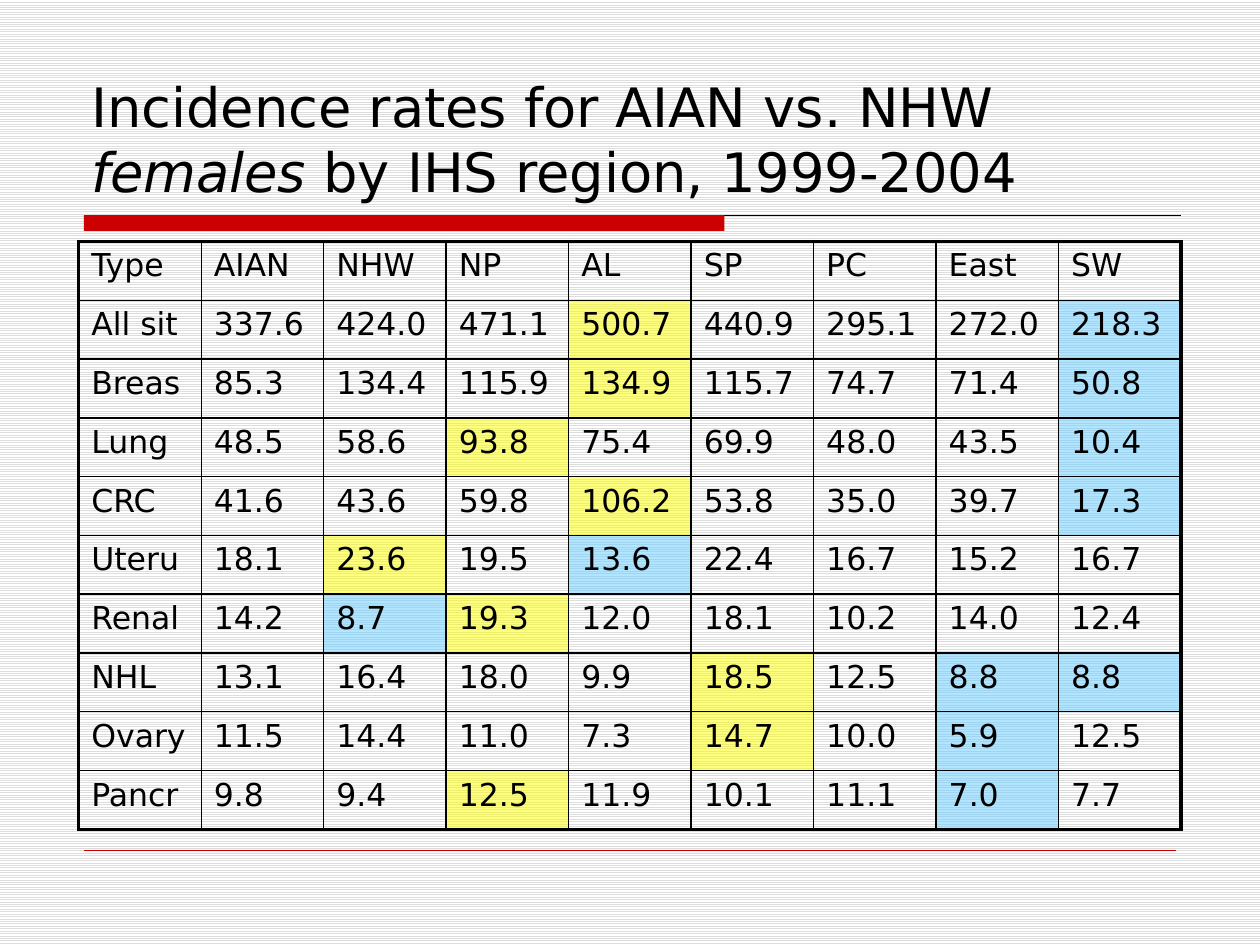
from dataclasses import dataclass

from lxml import etree
from pptx import Presentation
from pptx.dml.color import RGBColor
from pptx.enum.dml import MSO_PATTERN
from pptx.enum.shapes import MSO_CONNECTOR, MSO_SHAPE
from pptx.enum.text import MSO_ANCHOR
from pptx.oxml.ns import qn
from pptx.util import Inches, Pt

STRAIGHT = MSO_CONNECTOR.STRAIGHT
RECTANGLE = MSO_SHAPE.RECTANGLE
BOTTOM = MSO_ANCHOR.BOTTOM
STRIPES = MSO_PATTERN.LIGHT_HORIZONTAL
GRID = Inches(1) // 24  # the page is 240 columns by 180 rows


@dataclass(frozen=True)
class Theme:
    font: str = "DejaVu Sans"
    title_size: float = 31
    cell_size: float = 18
    ink: str = "000000"
    accent: str = "CC0000"
    paper: str = "FFFFFF"
    stripe: str = "DDDDDD"
    highest: str = "FFFF00"
    lowest: str = "66CCFF"
    tint_alpha: int = 50
    inner_border: float = 1
    outer_border: float = 2.25


@dataclass(frozen=True)
class Area:
    column: int
    row: int
    columns: int
    rows: int

    def lengths(self) -> list[int]:
        return [n * GRID for n in (self.column, self.row, self.columns, self.rows)]


@dataclass(frozen=True)
class Rule:
    start: int
    end: int
    row: int
    color: str
    weight: float


@dataclass(frozen=True)
class Span:
    text: str
    italic: bool = False


THEME = Theme()
TITLE_AREA = Area(15, 8, 210, 32)
BAR_AREA = Area(16, 41, 122, 3)
TABLE_AREA = Area(15, 46, 210, 112)
RULES = (
    Rule(16, 225, 41, THEME.ink, 0.75),
    Rule(16, 224, 162, THEME.accent, 0.25),
)
TITLE = (
    Span("Incidence rates for AIAN vs. NHW "),
    Span("females", italic=True),
    Span(" by IHS region, 1999-2004"),
)
HEADER = ("Type", "AIAN", "NHW", "NP", "AL", "SP", "PC", "East", "SW")
RATES = {
    "All sit": (337.6, 424.0, 471.1, 500.7, 440.9, 295.1, 272.0, 218.3),
    "Breas": (85.3, 134.4, 115.9, 134.9, 115.7, 74.7, 71.4, 50.8),
    "Lung": (48.5, 58.6, 93.8, 75.4, 69.9, 48.0, 43.5, 10.4),
    "CRC": (41.6, 43.6, 59.8, 106.2, 53.8, 35.0, 39.7, 17.3),
    "Uteru": (18.1, 23.6, 19.5, 13.6, 22.4, 16.7, 15.2, 16.7),
    "Renal": (14.2, 8.7, 19.3, 12.0, 18.1, 10.2, 14.0, 12.4),
    "NHL": (13.1, 16.4, 18.0, 9.9, 18.5, 12.5, 8.8, 8.8),
    "Ovary": (11.5, 14.4, 11.0, 7.3, 14.7, 10.0, 5.9, 12.5),
    "Pancr": (9.8, 9.4, 12.5, 11.9, 10.1, 11.1, 7.0, 7.7),
}


def add_span(para, span: Span, size: float) -> None:
    run = para.add_run()
    run.text = span.text
    formats = {"name": THEME.font, "size": Pt(size), "italic": span.italic}
    for name, value in formats.items():
        setattr(run.font, name, value)
    run.font.color.rgb = RGBColor.from_string(THEME.ink)


def add_rule(page, rule: Rule) -> None:
    ends = [n * GRID for n in (rule.start, rule.row, rule.end, rule.row)]
    line = page.shapes.add_connector(STRAIGHT, *ends)
    line.line.color.rgb = RGBColor.from_string(rule.color)
    line.line.width = Pt(rule.weight)
    etree.SubElement(line._element.spPr, qn("a:effectLst"))


def add_bar(page) -> None:
    bar = page.shapes.add_shape(RECTANGLE, *BAR_AREA.lengths())
    bar.shadow.inherit = False
    bar.fill.solid()
    bar.fill.fore_color.rgb = RGBColor.from_string(THEME.accent)
    bar.line.fill.background()


def add_title(page) -> None:
    frame = page.shapes.add_textbox(*TITLE_AREA.lengths()).text_frame
    for name, value in {"word_wrap": True, "vertical_anchor": BOTTOM}.items():
        setattr(frame, name, value)
    for span in TITLE:
        add_span(frame.paragraphs[0], span, THEME.title_size)


def set_borders(cell, outer_edges: dict[str, bool]) -> None:
    properties = cell._tc.get_or_add_tcPr()
    for position, (side, is_outer) in enumerate(outer_edges.items()):
        weight = THEME.outer_border if is_outer else THEME.inner_border
        border = etree.Element(qn(f"a:ln{side}"), w=str(Pt(weight)))
        fill = etree.SubElement(border, qn("a:solidFill"))
        etree.SubElement(fill, qn("a:srgbClr"), val=THEME.ink)
        properties.insert(position, border)


def set_tint(cell, color: str | None) -> None:
    if color is None:
        cell.fill.background()
        return
    cell.fill.solid()
    cell.fill.fore_color.rgb = RGBColor.from_string(color)
    tint = cell._tc.tcPr.find(f"{qn('a:solidFill')}/{qn('a:srgbClr')}")
    etree.SubElement(tint, qn("a:alpha"), val=str(THEME.tint_alpha * 1000))


def fill_cell(cell, text: str, tint: str | None, outer_edges: dict[str, bool]) -> None:
    para = cell.text_frame.paragraphs[0]
    spacing = etree.SubElement(para._p.get_or_add_pPr(), qn("a:spcBef"))
    etree.SubElement(spacing, qn("a:spcPct"), val="20000")
    add_span(para, Span(text), THEME.cell_size)
    set_tint(cell, tint)
    set_borders(cell, outer_edges)


def add_rates_table(page) -> None:
    # Each row's highest and lowest rates are tinted
    rows = [[(text, None) for text in HEADER]]
    for label, rates in RATES.items():
        tints = {max(rates): THEME.highest, min(rates): THEME.lowest}
        rows.append([(label, None)] + [(f"{rate:.1f}", tints.get(rate)) for rate in rates])
    last_row, last_column = len(rows) - 1, len(HEADER) - 1

    table = page.shapes.add_table(len(rows), len(HEADER), *TABLE_AREA.lengths()).table
    for name, value in {"first_row": False, "horz_banding": False}.items():
        setattr(table, name, value)
    for r, row in enumerate(rows):
        for c, (text, tint) in enumerate(row):
            outer_edges = {"L": c == 0, "R": c == last_column,
                           "T": r == 0, "B": r == last_row}
            fill_cell(table.cell(r, c), text, tint, outer_edges)


def main() -> None:
    deck = Presentation()
    deck.slide_width, deck.slide_height = 240 * GRID, 180 * GRID
    page = deck.slides.add_slide(deck.slide_layouts[6])

    # Striped background
    backdrop = page.background.fill
    backdrop.patterned()
    backdrop.pattern = STRIPES
    backdrop.fore_color.rgb = RGBColor.from_string(THEME.stripe)
    backdrop.back_color.rgb = RGBColor.from_string(THEME.paper)

    # Decoration, then content
    for rule in RULES:
        add_rule(page, rule)
    add_bar(page)
    add_title(page)
    add_rates_table(page)
    deck.save("out.pptx")


if __name__ == "__main__":
    main()
